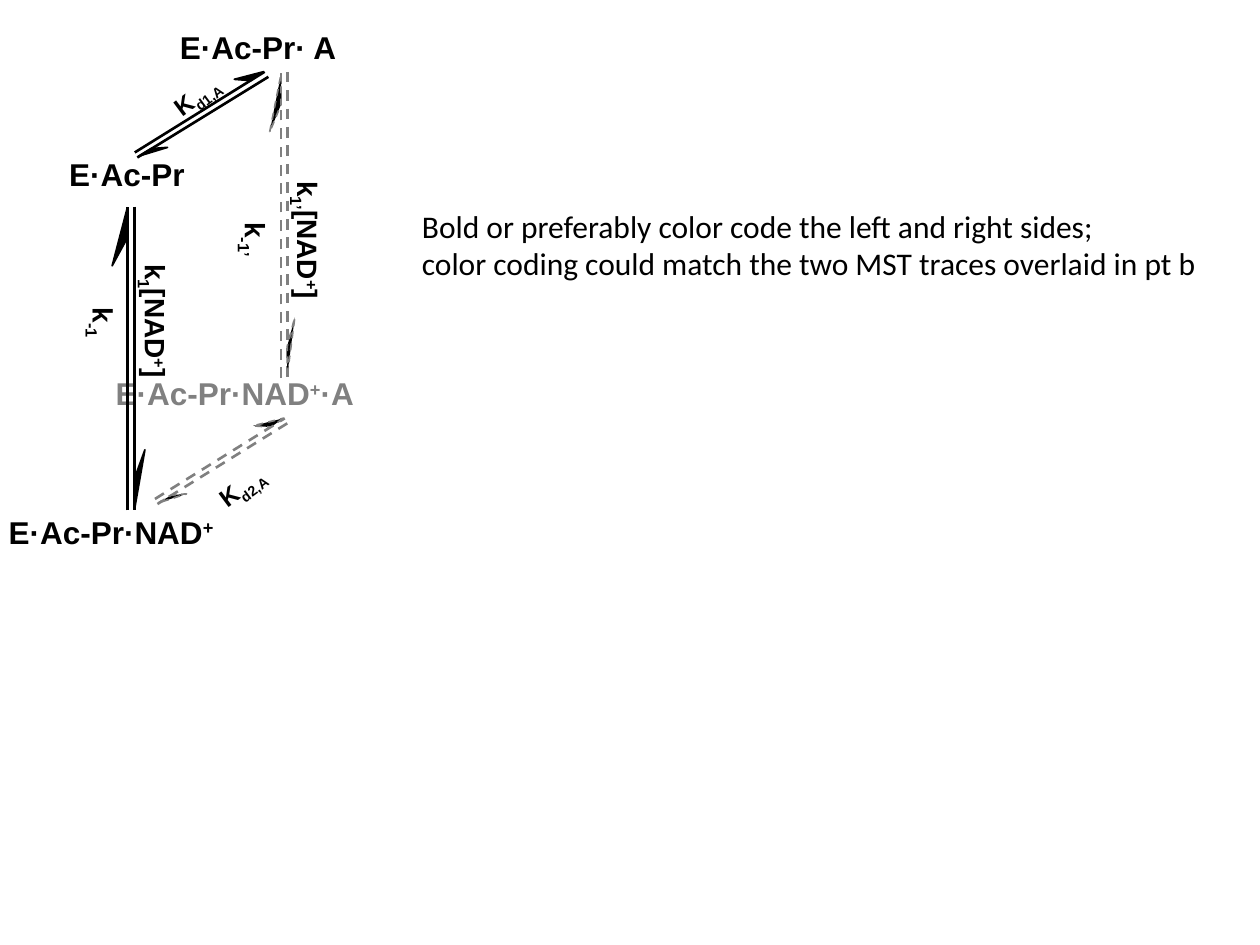
from lxml import etree
from pptx import Presentation
from pptx.dml.color import RGBColor
from pptx.enum.dml import MSO_LINE
from pptx.enum.shapes import MSO_CONNECTOR
from pptx.enum.text import MSO_AUTO_SIZE
from pptx.oxml.ns import qn
from pptx.util import Inches, Pt

STRAIGHT = MSO_CONNECTOR.STRAIGHT
DASH = MSO_LINE.DASH
FIT = MSO_AUTO_SIZE.SHAPE_TO_FIT_TEXT
COLORS = {"black": "000000", "gray": "808080"}
SUB, SUP = -25, 30

prs = Presentation()
prs.slide_width, prs.slide_height = Inches(10), Inches(7.5)
s = prs.slides.add_slide(prs.slide_layouts[6])


def add_equilibrium(half_arrows, color, dashed):
    group = s.shapes.add_group_shape()
    for start, end, barb in half_arrows:
        line = group.shapes.add_connector(STRAIGHT, *[Inches(v) for v in start + end])
        points = [(Inches(x), Inches(y)) for x, y in barb]
        builder = group.shapes.build_freeform(*points[0], scale=1.0)
        builder.add_line_segments(points[1:], close=True)
        head = builder.convert_to_shape()
        head.shadow.inherit = False
        head.fill.solid()
        head.fill.fore_color.rgb = RGBColor.from_string(COLORS["black"])
        for sp, width in ((line, 1.5), (head, 1)):
            sp.line.color.rgb = RGBColor.from_string(COLORS[color])
            sp.line.width = Pt(width)
            if dashed:
                sp.line.dash_style = DASH
        etree.SubElement(line._element.spPr, qn("a:effectLst"))


def add_label(box, paragraphs, size=18, color="black", rotation=0, name="Arial", bold=True):
    sp = s.shapes.add_textbox(*[Inches(v) for v in box])
    sp.rotation = rotation
    tf = sp.text_frame
    tf.word_wrap = False
    tf.auto_size = FIT
    for i, runs in enumerate(paragraphs):
        p = tf.add_paragraph() if i else tf.paragraphs[0]
        for text, baseline in runs:
            r = p.add_run()
            r.text = text
            for key, value in {"name": name, "size": Pt(size), "bold": bold}.items():
                setattr(r.font, key, value)
            r.font.color.rgb = RGBColor.from_string(COLORS[color])
            if baseline:
                r.font._element.set("baseline", str(baseline * 1000))


add_equilibrium([
    ((2.28, 0.57), (2.28, 3), [(2.28, 2.98), (2.28, 2.75), (2.34, 2.52)]),
    ((2.23, 3), (2.23, 0.57), [(2.23, 0.59), (2.23, 0.83), (2.14, 1.05)]),
], "gray", True)
add_equilibrium([
    ((2.28, 3.36), (1.25, 4), [(1.26, 3.99), (1.36, 3.93), (1.48, 3.92)]),
    ((1.23, 3.96), (2.26, 3.32), [(2.25, 3.32), (2.15, 3.39), (2.01, 3.38)]),
], "gray", True)

add_label((-0.03, 4.02, 1.85, 0.4), [[("E·Ac-Pr·NAD", 0), ("+", SUP)]])
add_label((0.82, 2.92, 2.11, 0.4), [[("E·Ac-Pr·NAD", 0), ("+", SUP), ("·A", 0)]], color="gray")
add_label((0.45, 1.18, 1.12, 0.4), [[("E·Ac-Pr", 0)]])
add_label((1.33, 0.17, 1.44, 0.4), [[("E·Ac-Pr· A", 0)]])

add_equilibrium([
    ((2.13, 0.61), (1.09, 1.25), [(1.1, 1.24), (1.2, 1.18), (1.33, 1.17)]),
    ((1.07, 1.21), (2.1, 0.57), [(2.09, 0.57), (1.99, 0.64), (1.86, 0.63)]),
], "black", False)
add_equilibrium([
    ((1.07, 1.64), (1.07, 4.05), [(1.07, 4.03), (1.07, 3.79), (1.15, 3.57)]),
    ((1.01, 4.05), (1.01, 1.64), [(1.01, 1.65), (1.01, 1.89), (0.89, 2.11)]),
], "black", False)

for left, top, index in ((1.26, 0.57, "d1,A"), (1.62, 3.68, "d2,A")):
    add_label((left, top, 0.63, 0.34), [[("K", 0), (index, SUB)]], 14, rotation=323.3)

for left, top, index in ((0.65, 2.4, "1"), (1.86, 1.74, "1’")):
    runs = [("k", 0), (index, SUB), ("[NAD", 0), ("+", SUP), ("]", 0)]
    add_label((left, top, 1.17, 0.37), [runs], 16, rotation=90)

for left, top, width, index in ((0.59, 2.39, 0.46, "-1"), (1.78, 1.73, 0.5, "-1’")):
    add_label((left, top, width, 0.37), [[("k", 0), (index, SUB)]], 16, rotation=90)

add_label((3.25, 1.59, 6.42, 0.71), [
    [("Bold or preferably color code the left and right sides;", 0)],
    [("color coding could match the two MST traces overlaid in pt b", 0)],
], name="Calibri", bold=False)

prs.save("out.pptx")
